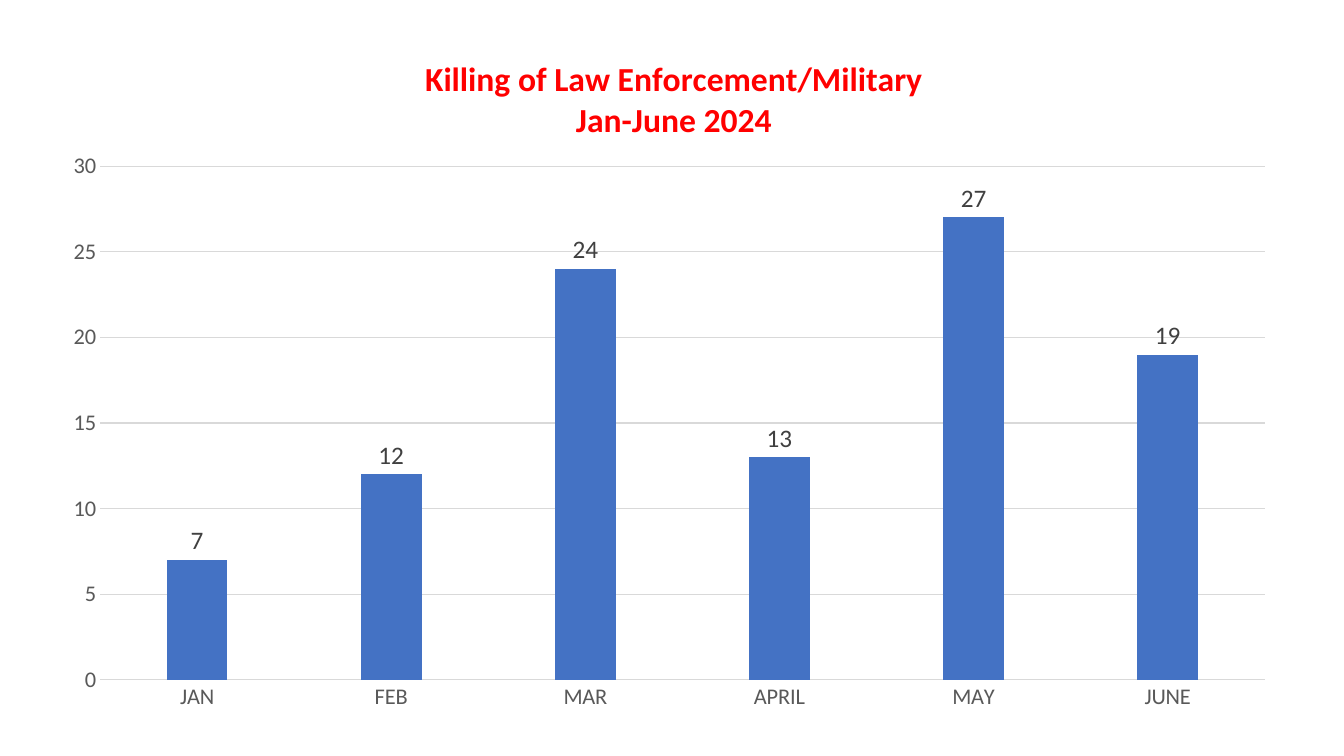
from lxml import etree
from pptx import Presentation
from pptx.chart.data import CategoryChartData
from pptx.dml.color import RGBColor
from pptx.enum.chart import XL_CHART_TYPE, XL_LABEL_POSITION, XL_TICK_MARK
from pptx.oxml.ns import qn
from pptx.util import Inches, Pt

COLUMNS = XL_CHART_TYPE.COLUMN_CLUSTERED
OUTSIDE = XL_LABEL_POSITION.OUTSIDE_END
NO_TICK = XL_TICK_MARK.NONE

FONT = "Calibri"
RED, BLUE, GRID = "FF0000", "4472C4", "D9D9D9"
AXIS_TEXT, LABEL_TEXT = "595959", "404040"

TITLE = ["Killing of Law Enforcement/Military", "Jan-June 2024"]
KILLINGS = {"JAN": 7, "FEB": 12, "MAR": 24, "APRIL": 13, "MAY": 27, "JUNE": 19}


def rgb(value):
    return RGBColor.from_string(value)


def style_font(font, size, color, bold=False):
    font.name, font.size, font.bold = FONT, Pt(size), bold
    font.color.rgb = rgb(color)


def style_line(line, color):
    line.color.rgb = rgb(color)
    line.width = Pt(0.75)


def set_layout(part, index, **settings):
    """Place a chart part by fractions of the chart area."""
    layout = part.find(qn("c:layout"))
    if layout is None:
        layout = etree.Element(qn("c:layout"))
        part.insert(index, layout)
    manual = etree.SubElement(layout, qn("c:manualLayout"))
    for name, value in settings.items():
        etree.SubElement(manual, qn(f"c:{name}")).set("val", str(value))


def add_title(chart):
    tf = chart.chart_title.text_frame
    for i, text in enumerate(TITLE):
        p = tf.paragraphs[0] if i == 0 else tf.add_paragraph()
        r = p.add_run()
        r.text = text
        style_font(r.font, 24, RED, bold=True)
    title = chart._chartSpace.chart.find(qn("c:title"))
    set_layout(title, 1, xMode="edge", yMode="edge", x=0.3, y=0.04)


def style_axes(chart):
    for axis in (chart.category_axis, chart.value_axis):
        axis.major_tick_mark = axis.minor_tick_mark = NO_TICK
        style_font(axis.tick_labels.font, 16, AXIS_TEXT)
    style_line(chart.category_axis.format.line, GRID)
    values = chart.value_axis
    values.minimum_scale, values.maximum_scale, values.major_unit = 0, 30, 5
    values.format.line.fill.background()
    style_line(values.major_gridlines.format.line, GRID)


def style_columns(plot):
    plot.gap_width, plot.overlap = 219, -27
    plot.vary_by_categories = False
    series = plot.series[0]
    series.format.fill.solid()
    series.format.fill.fore_color.rgb = rgb(BLUE)
    labels = series.data_labels
    labels.show_value = True
    labels.position = OUTSIDE
    style_font(labels.font, 18, LABEL_TEXT)


def add_killings_chart(slide, left, top, width, height):
    data = CategoryChartData()
    data.categories = list(KILLINGS)
    data.add_series("Series 1", list(KILLINGS.values()))
    chart = slide.shapes.add_chart(COLUMNS, left, top, width, height, data).chart
    chart.has_legend = False
    style_font(chart.font, 10, "000000")

    add_title(chart)
    style_axes(chart)
    style_columns(chart.plots[0])

    # Plot area inside the axes
    set_layout(chart._chartSpace.chart.plotArea, 0, layoutTarget="inner",
               xMode="edge", yMode="edge", x=0.04, y=0.2, w=0.94, h=0.74)


def main():
    prs = Presentation()
    prs.slide_width, prs.slide_height = Inches(13.33), Inches(7.5)
    slide = prs.slides.add_slide(prs.slide_layouts[6])
    add_killings_chart(slide, Inches(0.5), Inches(0.27), Inches(12.29), Inches(6.89))
    prs.save("out.pptx")


if __name__ == "__main__":
    main()
